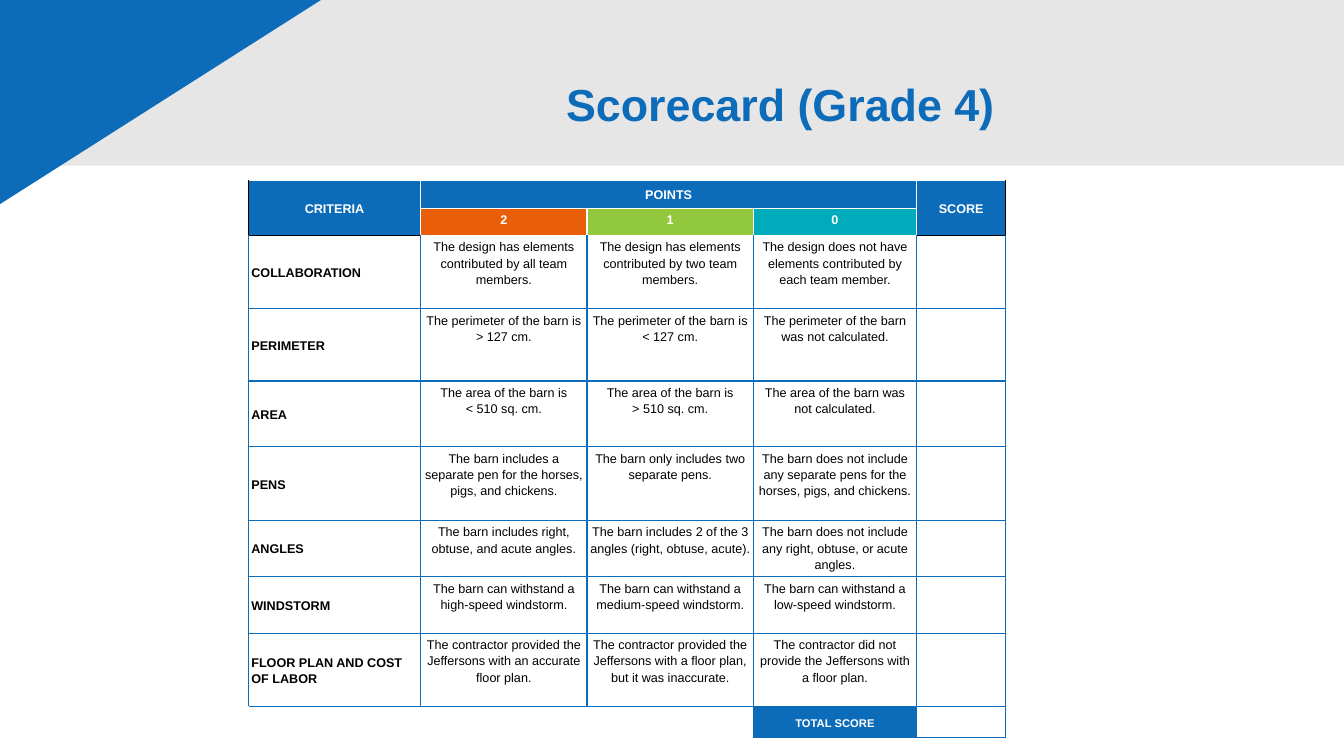
from lxml import etree
from pptx import Presentation
from pptx.dml.color import RGBColor
from pptx.enum import shapes, text
from pptx.oxml import ns
from pptx.util import Pt

BLUE = RGBColor(0x0D, 0x6C, 0xB9)
GREY = RGBColor(0xE7, 0xE6, 0xE6)
ORANGE = RGBColor(0xE9, 0x5E, 0x09)
GREEN = RGBColor(0x92, 0xC8, 0x3E)
TEAL = RGBColor(0x00, 0xAC, 0xBB)
WHITE = RGBColor(0xFF, 0xFF, 0xFF)
BLACK = RGBColor(0, 0, 0)

NO_STYLE = "{2D5ABB26-0587-4C30-8999-92F81FD0307C}"
CENTER, LEFT = text.PP_ALIGN.CENTER, text.PP_ALIGN.LEFT
MIDDLE, TOP = text.MSO_ANCHOR.MIDDLE, text.MSO_ANCHOR.TOP

COLUMN_WIDTHS = [123.12, 118.8, 118.8, 116.64, 63.7]
ROW_HEIGHTS = [19.6, 19.5, 52.2, 51.8, 47.1, 52.5, 40.2, 40.4, 52.5, 22.2]
SCORE_COLUMN = 4
FIRST_CRITERION, TOTAL_ROW = 2, 9

# Criterion, then the wording for 2, 1 and 0 points
CRITERIA = [
    ("COLLABORATION",
     "The design has elements contributed by all team members.",
     "The design has elements contributed by two team members.",
     "The design does not have elements contributed by each team member."),
    ("PERIMETER",
     "The perimeter of the barn is > 127 cm.",
     "The perimeter of the barn is < 127 cm.",
     "The perimeter of the barn was not calculated."),
    ("AREA",
     "The area of the barn is\n< 510 sq. cm.",
     "The area of the barn is\n> 510 sq. cm.",
     "The area of the barn was not calculated."),
    ("PENS",
     "The barn includes a separate pen for the horses, pigs, and chickens.",
     "The barn only includes two separate pens.",
     "The barn does not include any separate pens for the horses, pigs, "
     "and chickens."),
    ("ANGLES",
     "The barn includes right, obtuse, and acute angles.",
     "The barn includes 2 of the 3 angles (right, obtuse, acute).",
     "The barn does not include any right, obtuse, or acute angles."),
    ("WINDSTORM",
     "The barn can withstand a high-speed windstorm.",
     "The barn can withstand a medium-speed windstorm.",
     "The barn can withstand a low-speed windstorm."),
    ("FLOOR PLAN AND COST OF LABOR",
     "The contractor provided the Jeffersons with an accurate floor plan.",
     "The contractor provided the Jeffersons with a floor plan, "
     "but it was inaccurate.",
     "The contractor did not provide the Jeffersons with a floor plan."),
]


def apply_format(target, values):
    for name, value in values.items():
        setattr(target, name, value)


def format_font(font, color, **values):
    apply_format(font, {"name": "Arial", **values})
    font.color.rgb = color


def add_backdrop(slide, preset, color, left, top, width, height):
    """Add a plain shape behind the title."""
    shape = slide.shapes.add_shape(
        preset, Pt(left), Pt(top), Pt(width), Pt(height))
    shape.shadow.inherit = False
    shape.fill.solid()
    shape.fill.fore_color.rgb = color
    shape.line.fill.background()
    slide.shapes.title._element.addprevious(shape._element)
    return shape


def set_title(slide, wording):
    title = slide.shapes.title
    apply_format(title, {"left": Pt(19.44), "top": Pt(24.48),
                         "width": Pt(698.4), "height": Pt(104.4)})
    frame = title.text_frame
    frame.text = wording
    frame.vertical_anchor = MIDDLE
    paragraph = frame.paragraphs[0]
    apply_format(paragraph, {"alignment": text.PP_ALIGN.RIGHT,
                             "line_spacing": 0.9})
    format_font(paragraph.runs[0].font, BLUE, size=Pt(32), bold=True)


def set_borders(cell, **colors):
    """Draw 1 pt borders; sides are L, R, T and B."""
    properties = cell._tc.get_or_add_tcPr()
    for side in "LRTB":
        if side in colors:
            line = etree.SubElement(properties, ns.qn(f"a:ln{side}"), w="12700")
            fill = etree.SubElement(line, ns.qn("a:solidFill"))
            etree.SubElement(fill, ns.qn("a:srgbClr"), val=str(colors[side]))


def fill_cell(cell, wording="", fill=WHITE, color=BLACK, bold=False, size=9,
              alignment=CENTER, anchor=MIDDLE, borders=None):
    set_borders(cell, **(borders or dict.fromkeys("LRTB", BLUE)))
    cell.fill.solid()
    cell.fill.fore_color.rgb = fill
    sides = ("left", "right", "top", "bottom")
    apply_format(cell, {f"margin_{side}": Pt(2.16) for side in sides})
    cell.vertical_anchor = anchor
    cell.text_frame.text = wording
    for paragraph in cell.text_frame.paragraphs:
        apply_format(paragraph, {"alignment": alignment, "line_spacing": 1.15})
        for run in paragraph.runs:
            format_font(run.font, color, size=Pt(size), bold=bold)
        if not paragraph.runs:
            etree.SubElement(paragraph._p, ns.qn("a:endParaRPr"), sz="900")


def add_table(slide):
    frame = slide.shapes.add_table(
        len(ROW_HEIGHTS), len(COLUMN_WIDTHS), Pt(177.4), Pt(129.1),
        Pt(sum(COLUMN_WIDTHS)), Pt(sum(ROW_HEIGHTS)))
    table = frame.table
    apply_format(table, {"first_row": False, "horz_banding": False})
    table._tbl.tblPr.find(ns.qn("a:tableStyleId")).text = NO_STYLE
    for column, width in zip(table.columns, COLUMN_WIDTHS):
        column.width = Pt(width)
    for row, height in zip(table.rows, ROW_HEIGHTS):
        row.height = Pt(height)
    return table


def fill_header(table):
    white = dict.fromkeys("LRTB", WHITE)
    heading = {"fill": BLUE, "color": WHITE, "bold": True}
    for column, wording, outer_side in ((0, "CRITERIA", "L"),
                                        (SCORE_COLUMN, "SCORE", "R")):
        table.cell(0, column).merge(table.cell(1, column))
        fill_cell(table.cell(0, column), wording, **heading,
                  borders={**white, outer_side: BLACK, "B": BLACK})
    table.cell(0, 1).merge(table.cell(0, 3))
    fill_cell(table.cell(0, 1), "POINTS", **heading, borders=white)
    for column, fill in enumerate((ORANGE, GREEN, TEAL), start=1):
        sides = "LRTB" if column == 1 else "LRB"
        fill_cell(table.cell(1, column), str(3 - column), fill, WHITE, True,
                  anchor=TOP, borders=dict.fromkeys(sides, WHITE))


def fill_criteria(table):
    for row, (criterion, *levels) in enumerate(CRITERIA, FIRST_CRITERION):
        for column, wording in enumerate([criterion, *levels, ""]):
            borders = dict.fromkeys("LRTB", BLUE)
            if row == FIRST_CRITERION:
                borders["T"] = BLACK if column in (0, SCORE_COLUMN) else WHITE
            layout = ({"bold": True, "alignment": LEFT} if column == 0
                      else {"anchor": TOP})
            fill_cell(table.cell(row, column), wording, borders=borders,
                      **layout)


def fill_total(table):
    table.cell(TOTAL_ROW, 0).merge(table.cell(TOTAL_ROW, 2))
    fill_cell(table.cell(TOTAL_ROW, 0),
              borders={"L": WHITE, "R": BLUE, "T": BLUE, "B": WHITE})
    fill_cell(table.cell(TOTAL_ROW, 3), "TOTAL SCORE", BLUE, WHITE, True, 8)
    fill_cell(table.cell(TOTAL_ROW, SCORE_COLUMN))


def main():
    presentation = Presentation()
    apply_format(presentation, {"slide_width": Pt(960),
                                "slide_height": Pt(540)})
    slide = presentation.slides.add_slide(presentation.slide_layouts[5])

    # Header band and corner triangle
    add_backdrop(slide, shapes.MSO_SHAPE.RECTANGLE, GREY,
                 -18.72, -13.68, 978.72, 132)
    corner = add_backdrop(slide, shapes.MSO_SHAPE.RIGHT_TRIANGLE, BLUE,
                          -185.04, -123.84, 609.12, 387.36)
    corner._element.spPr.find(ns.qn("a:xfrm")).set("flipV", "1")

    set_title(slide, "Scorecard (Grade 4)")

    # Scorecard
    table = add_table(slide)
    fill_header(table)
    fill_criteria(table)
    fill_total(table)

    presentation.save("out.pptx")


if __name__ == "__main__":
    main()
